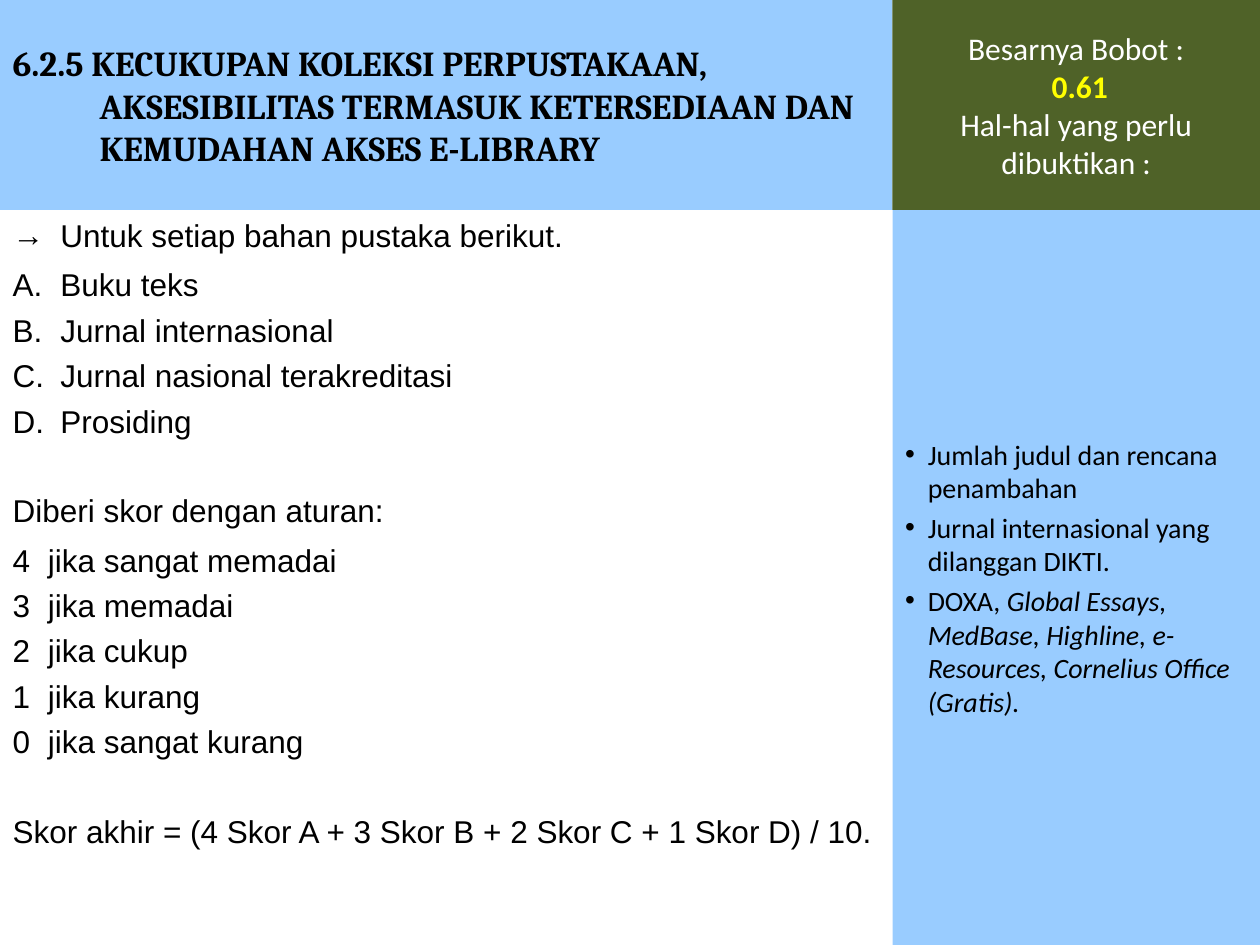
from dataclasses import dataclass
from typing import Optional

import pptx
import pptx.dml.color
import pptx.enum.shapes
import pptx.enum.text
import pptx.oxml.ns
import pptx.util
from lxml import etree

COLORS = {"sky": "99CCFF", "olive": "4F6228", "ink": "000000",
          "white": "FFFFFF", "yellow": "FFFF00"}
WIDTH, HEIGHT = pptx.util.Inches(10), pptx.util.Inches(7.5)
COLUMNS, ROWS = 24, 18
SPLIT_COLUMN, SPLIT_ROW = 17, 4
ALIGN = pptx.enum.text.PP_ALIGN
ANCHOR = pptx.enum.text.MSO_ANCHOR


@dataclass(frozen=True)
class Area:
    """A block of the page, in grid columns and rows."""
    column: float
    row: float
    columns: float
    rows: float


@dataclass(frozen=True)
class Style:
    font: str
    size: float
    align: ALIGN = ALIGN.LEFT


@dataclass(frozen=True)
class Line:
    text: str
    before: float = 0
    hang: float = 0
    bullet: Optional[str] = None
    color: str = "ink"
    bold: bool = False
    italic_tail: str = ""


LETTERED = "alphaUcPeriod"
HANG, SCORE_HANG, SIDE_HANG = 0.38, 0.28, 0.18
STEP, LEAD, SECTION, SIDE_STEP = 4.4, 6.5, 29.5, 3.5

HEADING = [Line("6.2.5 KECUKUPAN KOLEKSI PERPUSTAKAAN, AKSESIBILITAS TERMASUK "
                "KETERSEDIAAN DAN KEMUDAHAN AKSES E-LIBRARY", hang=0.69, bold=True)]
MATERIALS = ["Buku teks", "Jurnal internasional",
             "Jurnal nasional terakreditasi", "Prosiding"]
SCORES = ["sangat memadai", "memadai", "cukup", "kurang", "sangat kurang"]
CRITERIA = [
    Line("Untuk setiap bahan pustaka berikut.", hang=HANG, bullet="→"),
    *[Line(name, STEP if index else LEAD, HANG, LETTERED)
      for index, name in enumerate(MATERIALS)],
    Line("Diberi skor dengan aturan:", SECTION, HANG),
    *[Line(f"{4 - index}\tjika {level}", STEP if index else LEAD, SCORE_HANG)
      for index, level in enumerate(SCORES)],
    Line("Skor akhir = (4 Skor A + 3 Skor B + 2 Skor C + 1 Skor D) / 10.",
         SECTION, HANG),
]
EVIDENCE = [
    Line(text, SIDE_STEP, SIDE_HANG, "•", italic_tail=tail)
    for text, tail in [
        ("Jumlah judul dan rencana penambahan", ""),
        ("Jurnal internasional yang dilanggan DIKTI.", ""),
        ("DOXA, ", "Global Essays, MedBase, Highline, e-Resources, "
                   "Cornelius Office (Gratis)."),
    ]
]
WEIGHT = [
    Line("Besarnya Bobot :", color="white"),
    Line(" 0.61", color="yellow", bold=True),
    Line("Hal-hal yang perlu dibuktikan :", color="white"),
]


def rgb(name: str) -> pptx.dml.color.RGBColor:
    return pptx.dml.color.RGBColor.from_string(COLORS[name])


def place(shape, area: Area) -> None:
    shape.left = round(WIDTH * area.column / COLUMNS)
    shape.top = round(HEIGHT * area.row / ROWS)
    shape.width = round(WIDTH * area.columns / COLUMNS)
    shape.height = round(HEIGHT * area.rows / ROWS)


def paint(shape, color: str) -> None:
    shape.fill.solid()
    shape.fill.fore_color.rgb = rgb(color)
    shape.line.fill.background()


def set_bullet(para, hang: float, bullet: Optional[str]) -> None:
    """Set the hanging indent and a character, lettered or absent bullet."""
    properties = para._p.get_or_add_pPr()
    properties.set("marL", str(pptx.util.Inches(hang)))
    properties.set("indent", str(-pptx.util.Inches(hang)))
    if bullet is None:
        tag, attributes = "a:buNone", {}
    elif bullet == LETTERED:
        tag, attributes = "a:buAutoNum", {"type": bullet}
    else:
        tag, attributes = "a:buChar", {"char": bullet}
    etree.SubElement(properties, pptx.oxml.ns.qn(tag), attributes)


def write(shape, lines: list[Line], style: Style, anchor: ANCHOR) -> None:
    frame = shape.text_frame
    frame.word_wrap = True
    frame.auto_size = pptx.enum.text.MSO_AUTO_SIZE.NONE
    frame.vertical_anchor = anchor
    for index, line in enumerate(lines):
        para = frame.add_paragraph() if index else frame.paragraphs[0]
        set_bullet(para, line.hang, line.bullet)
        para.alignment = style.align
        para.space_before = pptx.util.Pt(line.before)
        para.font.name = style.font
        para.font.size = pptx.util.Pt(style.size)
        para.font.bold = line.bold
        para.font.color.rgb = rgb(line.color)
        para.add_run().text = line.text
        if line.italic_tail:
            span = para.add_run()
            span.text = line.italic_tail
            span.font.italic = True


def main() -> None:
    deck = pptx.Presentation()
    deck.slide_width, deck.slide_height = WIDTH, HEIGHT
    page = deck.slides.add_slide(deck.slide_layouts.get_by_name("Two Content"))
    title, criteria, evidence = list(page.placeholders)[:3]
    weight = page.shapes.add_shape(
        pptx.enum.shapes.MSO_SHAPE.RECTANGLE, 0, 0, WIDTH, HEIGHT)
    weight.shadow.inherit = False

    side, below = COLUMNS - SPLIT_COLUMN, ROWS - SPLIT_ROW
    place(title, Area(0, 0, SPLIT_COLUMN, SPLIT_ROW))
    place(criteria, Area(0, SPLIT_ROW, SPLIT_COLUMN + 0.4, below))
    place(evidence, Area(SPLIT_COLUMN, SPLIT_ROW, side, below))
    place(weight, Area(SPLIT_COLUMN, 0, side, SPLIT_ROW))

    paint(title, "sky")
    paint(evidence, "sky")
    paint(weight, "olive")

    write(title, HEADING, Style("Cambria", 20), ANCHOR.MIDDLE)
    write(criteria, CRITERIA, Style("Arial", 18), ANCHOR.TOP)
    write(evidence, EVIDENCE, Style("Calibri", 16), ANCHOR.MIDDLE)
    write(weight, WEIGHT, Style("Calibri", 18, ALIGN.CENTER), ANCHOR.MIDDLE)
    deck.save("out.pptx")


if __name__ == "__main__":
    main()
